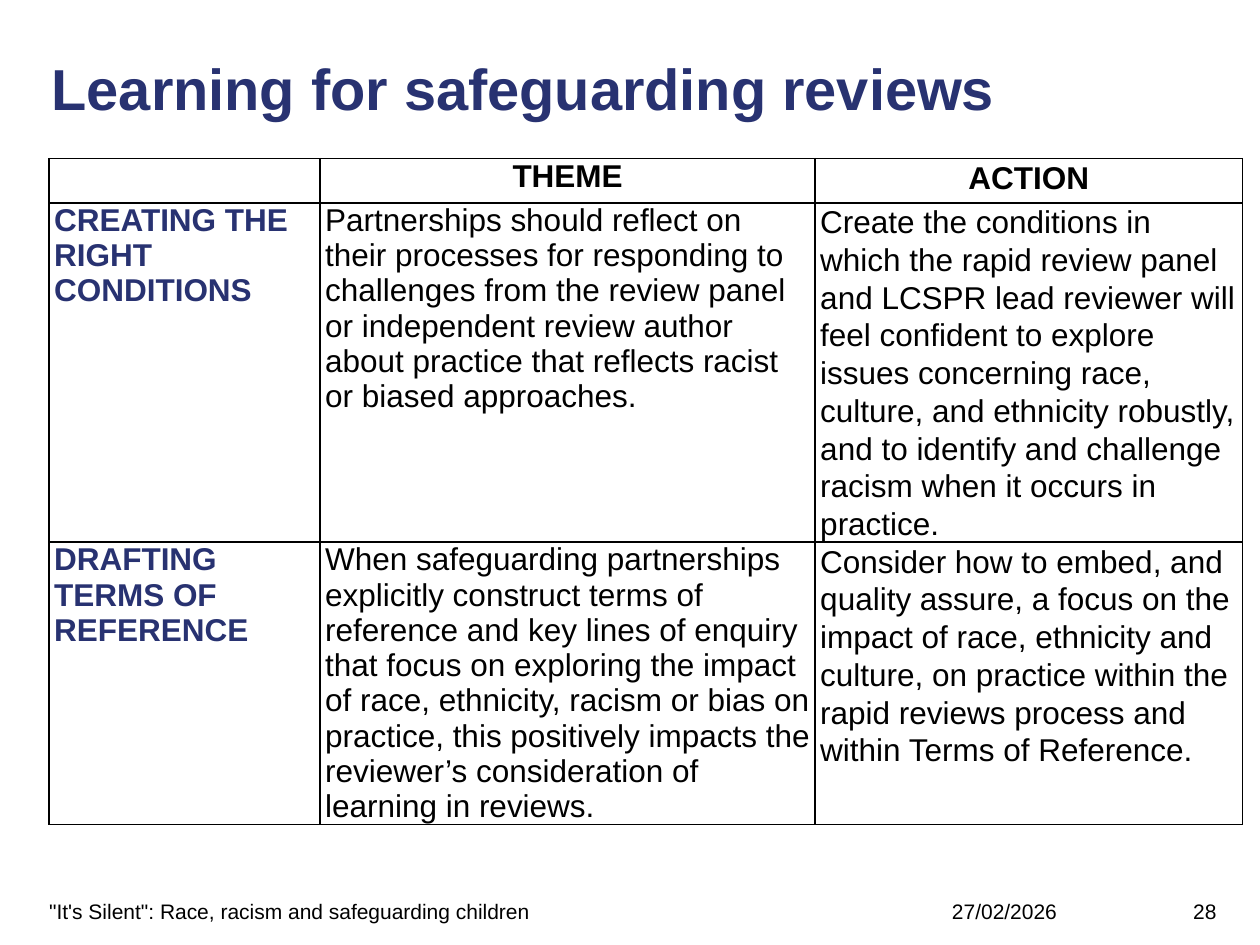
"""Build the slide on learning for safeguarding reviews."""
from dataclasses import dataclass

import lxml.etree
import pptx
import pptx.dml.color
import pptx.enum.text
import pptx.oxml.ns
import pptx.util

Inches = pptx.util.Inches
Pt = pptx.util.Pt
Align = pptx.enum.text.PP_ALIGN
Anchor = pptx.enum.text.MSO_ANCHOR


@dataclass(frozen=True)
class Theme:
    font: str = "Arial"
    navy: str = "283271"
    black: str = "000000"
    title_size: int = 33
    table_size: int = 18
    footer_size: int = 12


THEME = Theme()
COLUMN_WIDTHS = (2.15, 3.93, 3.39)
ROW_HEIGHTS = (0.35, 2.69, 2.24)
ROWS = (
    ("", "THEME", "ACTION"),
    (
        "CREATING THE RIGHT CONDITIONS",
        "Partnerships should reflect on their processes for responding to challenges "
        "from the review panel or independent review author about practice that "
        "reflects racist or biased approaches.",
        "Create the conditions in which the rapid review panel and LCSPR lead reviewer "
        "will feel confident to explore issues concerning race, culture, and ethnicity "
        "robustly, and to identify and challenge racism when it occurs in practice.",
    ),
    (
        "DRAFTING TERMS OF REFERENCE",
        "When safeguarding partnerships explicitly construct terms of reference and key "
        "lines of enquiry that focus on exploring the impact of race, ethnicity, racism "
        "or bias on practice, this positively impacts the reviewer’s consideration of "
        "learning in reviews.",
        "Consider how to embed, and quality assure, a focus on the impact of race, "
        "ethnicity and culture, on practice within the rapid reviews process and within "
        "Terms of Reference.",
    ),
)
FOOTERS = (
    ('"It\'s Silent": Race, racism and safeguarding children', 0.39, 5.91, Align.LEFT),
    ("27/02/2026", 6.42, 1.97, Align.RIGHT),
    ("28", 9.47, 0.39, Align.LEFT),
)


def write(frame, text, size, color=THEME.black, bold=False, align=Align.LEFT):
    """Write one formatted run and return its paragraph."""
    para = frame.paragraphs[0]
    para.alignment = align
    span = para.add_run()
    span.text = text
    span.font.name = THEME.font
    span.font.size = Pt(size)
    span.font.bold = bold
    span.font.color.rgb = pptx.dml.color.RGBColor.from_string(color)
    return para


def prepare_frame(frame, anchor):
    """Remove the insets of a text frame, wrap it and anchor it."""
    frame.margin_left = frame.margin_right = 0
    frame.margin_top = frame.margin_bottom = 0
    frame.word_wrap = True
    frame.auto_size = pptx.enum.text.MSO_AUTO_SIZE.NONE
    frame.vertical_anchor = anchor


def add_title(page, text):
    """Place and fill the title placeholder."""
    title = page.shapes.title
    title.left, title.top = Inches(0.41), Inches(0.48)
    title.width, title.height = Inches(9.19), Inches(1.18)
    prepare_frame(title.text_frame, Anchor.TOP)
    para = write(title.text_frame, text, THEME.title_size, THEME.navy, True)
    para.line_spacing = 0.9


def add_footer(page, text, left, width, align):
    """Add one text box on the footer line."""
    box = page.shapes.add_textbox(Inches(left), Inches(7.13), Inches(width), Inches(0.2))
    prepare_frame(box.text_frame, Anchor.MIDDLE)
    write(box.text_frame, text, THEME.footer_size, align=align)


def set_borders(cell):
    """Draw a thin black line on all four sides of a cell."""
    properties = cell._tc.get_or_add_tcPr()
    qn = pptx.oxml.ns.qn
    for index, side in enumerate(("lnL", "lnR", "lnT", "lnB")):
        line = lxml.etree.Element(qn(f"a:{side}"), w=str(Pt(1)))
        fill = lxml.etree.SubElement(line, qn("a:solidFill"))
        lxml.etree.SubElement(fill, qn("a:srgbClr"), val=THEME.black)
        properties.insert(index, line)


def fill_cell(cell, text, row, column):
    """Format a cell by its row and column and write its text."""
    cell.margin_left = cell.margin_right = Inches(0.04)
    cell.margin_top = cell.margin_bottom = 0
    cell.fill.background()
    set_borders(cell)
    if not text:
        return
    header = row == 0
    label = column == 0
    para = write(
        cell.text_frame,
        text,
        THEME.table_size,
        THEME.navy if label else THEME.black,
        header or label,
        Align.CENTER if header else Align.LEFT,
    )
    if column == 2:
        para.line_spacing = 1.07
        para.space_after = Pt(8)


def add_review_table(page):
    """Add the table of themes and actions."""
    table = page.shapes.add_table(
        len(ROWS), len(COLUMN_WIDTHS), Inches(0.39), Inches(1.26),
        Inches(sum(COLUMN_WIDTHS)), Inches(sum(ROW_HEIGHTS)),
    ).table
    table.first_row = table.horz_banding = False
    for column, width in zip(table.columns, COLUMN_WIDTHS):
        column.width = Inches(width)
    for row, height in zip(table.rows, ROW_HEIGHTS):
        row.height = Inches(height)
    for row, texts in enumerate(ROWS):
        for column, text in enumerate(texts):
            fill_cell(table.cell(row, column), text, row, column)


def main():
    """Build and save the deck."""
    deck = pptx.Presentation()
    deck.slide_width, deck.slide_height = Inches(10), Inches(7.5)
    page = deck.slides.add_slide(deck.slide_layouts[5])
    add_title(page, "Learning for safeguarding reviews")
    for footer in FOOTERS:
        add_footer(page, *footer)
    add_review_table(page)
    deck.save("out.pptx")


if __name__ == "__main__":
    main()
